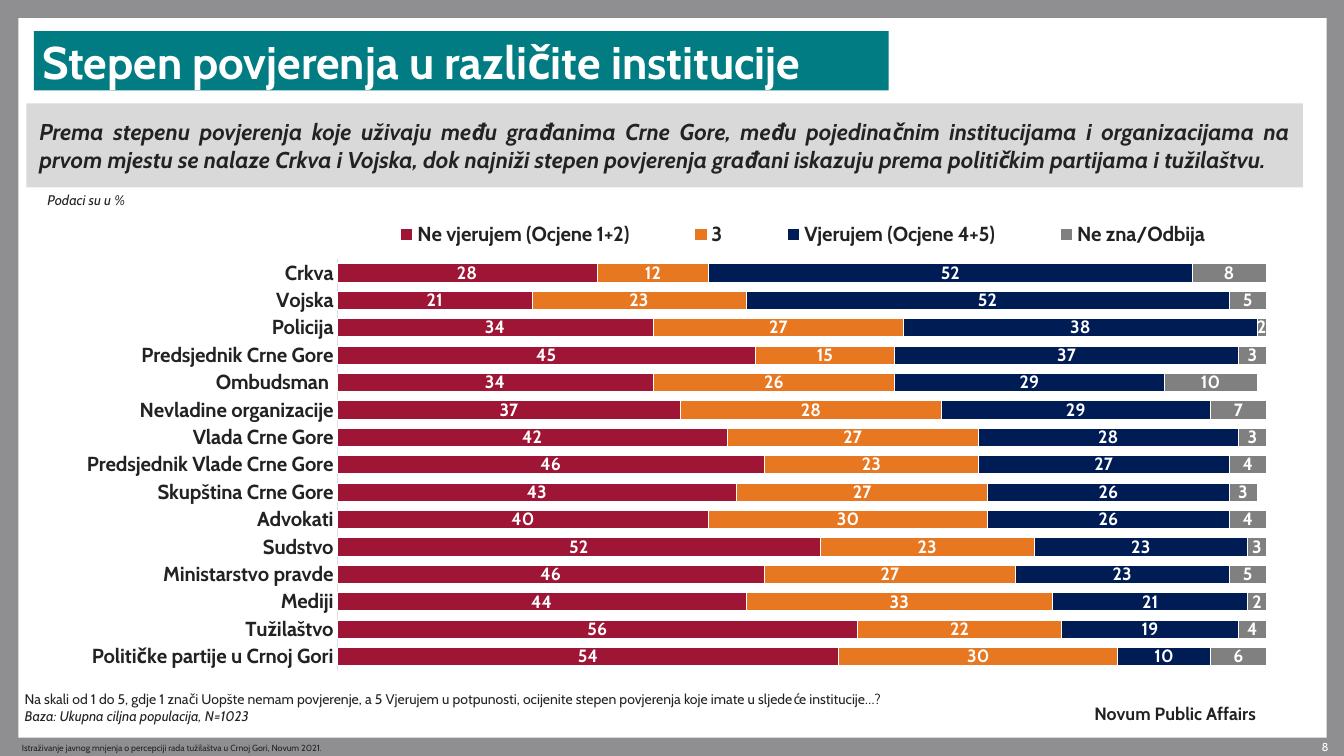
from dataclasses import dataclass
from typing import Any, Optional

import lxml.etree
import pptx
import pptx.chart.data
import pptx.dml.color
import pptx.enum.chart
import pptx.enum.shapes
import pptx.enum.text
import pptx.oxml
import pptx.util

RGB = pptx.dml.color.RGBColor
Inches = pptx.util.Inches
Align = pptx.enum.text.PP_ALIGN
Anchor = pptx.enum.text.MSO_ANCHOR

FACE = "Cabin"
WHITE = RGB(0xFF, 0xFF, 0xFF)
INK = RGB(0x22, 0x22, 0x23)
FRAME = RGB(0x8F, 0x8F, 0x92)
TEAL = RGB(0x00, 0x7C, 0x82)
PALE = RGB(0xD9, 0xD9, 0xD9)
RULE = RGB(0xDD, 0xDD, 0xDE)
RED = RGB(0x9F, 0x15, 0x35)
ORANGE = RGB(0xE8, 0x77, 0x22)
NAVY = RGB(0x00, 0x1C, 0x54)
GRAY = RGB(0x80, 0x80, 0x80)


@dataclass
class Line:
    text: str
    bold: bool = False
    italic: bool = False


@dataclass
class Box:
    area: tuple[float, float, float, float]
    lines: tuple[Line, ...] = ()
    size: int = 11
    color: RGB = INK
    fill: Optional[RGB] = None
    align: Align = Align.LEFT
    anchor: Anchor = Anchor.MIDDLE
    inset: tuple[float, float] = (0, 0)


@dataclass
class Series:
    name: str
    color: RGB
    values: tuple[int, ...]


BOXES = (
    Box((0.2, 0.2, 14.31, 7.87), fill=WHITE),
    Box((14.06, 8.09, 0.47, 0.17), (Line("8"),), 9, WHITE, align=Align.RIGHT),
    Box((11.97, 7.69, 2.09, 0.24), (Line("Novum Public Affairs", bold=True),), 14,
        anchor=Anchor.TOP),
    Box((0.24, 8.09, 4.86, 0.18), (Line(
        "Istraživanje javnog mnjenja o percepciji rada tužilaštva "
        "u Crnoj Gori, Novum 2021."),), 7),
    Box((0.37, 0.34, 9.35, 0.65),
        (Line("Stepen povjerenja u različite institucije", bold=True),),
        36, WHITE, TEAL, inset=(0.09, 0.02)),
    Box((0.29, 1.13, 13.96, 0.92), (Line(
        "Prema stepenu povjerenja koje uživaju među građanima Crne Gore, među "
        "pojedinačnim institucijama i organizacijama na prvom mjestu se nalaze "
        "Crkva i Vojska, dok najniži stepen povjerenja građani iskazuju prema "
        "političkim partijama i tužilaštvu.", bold=True, italic=True),),
        18, fill=PALE, align=Align.JUSTIFY, inset=(0.14, 0)),
    Box((0.42, 2.05, 1.34, 0.29), (Line("Podaci su u %", italic=True),),
        anchor=Anchor.TOP, inset=(0.1, 0.05)),
    Box((0.27, 7.55, 10.33, 0.38), (
        Line("Na skali od 1 do 5, gdje 1 znači Uopšte nemam povjerenje, a 5 Vjerujem "
             "u potpunosti, ocijenite stepen povjerenja koje imate u sljedeće "
             "institucije…?"),
        Line("Baza: Ukupna ciljna populacija, N=1023", italic=True))),
)

BODIES = (
    "Crkva", "Vojska", "Policija", "Predsjednik Crne Gore", "Ombudsman ",
    "Nevladine organizacije", "Vlada Crne Gore", "Predsjednik Vlade Crne Gore",
    "Skupština Crne Gore", "Advokati", "Sudstvo", "Ministarstvo pravde",
    "Mediji", "Tužilaštvo", "Političke partije u Crnoj Gori",
)
TRUST = (
    Series("Ne vjerujem (Ocjene 1+2)", RED,
           (28, 21, 34, 45, 34, 37, 42, 46, 43, 40, 52, 46, 44, 56, 54)),
    Series("3", ORANGE,
           (12, 23, 27, 15, 26, 28, 27, 23, 27, 30, 23, 27, 33, 22, 30)),
    Series("Vjerujem (Ocjene 4+5)", NAVY,
           (52, 52, 38, 37, 29, 29, 28, 27, 26, 26, 23, 23, 21, 19, 10)),
    Series("Ne zna/Odbija", GRAY,
           (8, 5, 2, 3, 10, 7, 3, 4, 3, 4, 3, 5, 2, 4, 6)),
)


def style(font: Any, size: int, color: RGB, bold: bool = False,
          italic: bool = False) -> None:
    font.name = FACE
    font.size = pptx.util.Pt(size)
    font.color.rgb = color
    font.bold = bold
    font.italic = italic


def draw(slide: Any, box: Box) -> None:
    area = [Inches(n) for n in box.area]
    if box.fill is None:
        shape = slide.shapes.add_textbox(*area)
    else:
        shape = slide.shapes.add_shape(
            pptx.enum.shapes.MSO_SHAPE.RECTANGLE, *area)
        shape.shadow.inherit = False
        shape.fill.solid()
        shape.fill.fore_color.rgb = box.fill
        shape.line.fill.background()
    if not box.lines:
        return
    frame = shape.text_frame
    frame.word_wrap = True
    frame.vertical_anchor = box.anchor
    frame.margin_left = frame.margin_right = Inches(box.inset[0])
    frame.margin_top = frame.margin_bottom = Inches(box.inset[1])
    frame.text = "\n".join(line.text for line in box.lines)
    for para, line in zip(frame.paragraphs, box.lines):
        para.alignment = box.align
        for run in para.runs:
            style(run.font, box.size, box.color, line.bold, line.italic)


def place(part: Any, area: tuple[float, float, float, float],
          inner: bool = False) -> None:
    """Fix a chart part at fractions of the chart area."""
    tags = [("layoutTarget", "inner")] if inner else []
    tags += [("xMode", "edge"), ("yMode", "edge")]
    tags += list(zip("xywh", area))
    space = pptx.oxml.ns.nsdecls("c")
    body = "".join(f'<c:{tag} val="{val}"/>' for tag, val in tags)
    layout = pptx.oxml.parse_xml(
        f"<c:layout {space}><c:manualLayout>{body}</c:manualLayout></c:layout>")
    name = pptx.oxml.ns.qn("c:layout")
    for old in part.findall(name):
        part.remove(old)
    # The layout comes first in a plot area, and after the position in a legend.
    part.insert(0 if inner else 1, layout)


def plot(slide: Any) -> None:
    data = pptx.chart.data.CategoryChartData(number_format="#,##0")
    data.categories = BODIES
    for item in TRUST:
        data.add_series(item.name, item.values)
    kinds = pptx.enum.chart
    chart = slide.shapes.add_chart(
        kinds.XL_CHART_TYPE.BAR_STACKED, Inches(0.29), Inches(2.23),
        Inches(13.81), Inches(5.14), data).chart
    style(chart.font, 16, INK, bold=True)
    chart.has_title = False

    chart.has_legend = True
    legend = chart.legend
    legend.position = kinds.XL_LEGEND_POSITION.RIGHT
    legend.include_in_layout = False
    style(legend.font, 16, INK, bold=True)
    place(legend._element, (0.25, 0.02, 0.73, 0.09))
    place(chart._chartSpace.chart.plotArea, (0.246, 0.118, 0.736, 0.875), inner=True)

    axis = chart.category_axis
    axis.reverse_order = True
    axis.major_tick_mark = kinds.XL_TICK_MARK.NONE
    axis.format.line.color.rgb = RULE
    axis.format.line.width = pptx.util.Pt(0.75)
    style(axis.tick_labels.font, 16, INK, bold=True)
    scale = chart.value_axis
    scale.minimum_scale = 0
    scale.maximum_scale = 100
    scale.has_major_gridlines = False
    scale.visible = False

    bars = chart.plots[0]
    bars.gap_width = 50
    bars.overlap = 100
    bars.vary_by_categories = False
    for series, item in zip(bars.series, TRUST):
        series.format.fill.solid()
        series.format.fill.fore_color.rgb = item.color
        series.format.line.color.rgb = WHITE
        series.format.line.width = pptx.util.Pt(0.75)
        labels = series.data_labels
        labels.show_value = True
        labels.number_format = "#,##0"
        labels.number_format_is_linked = False
        style(labels.font, 14, WHITE, bold=True)


def main() -> None:
    deck = pptx.Presentation()
    deck.slide_width = Inches(14.7)
    deck.slide_height = Inches(8.27)
    slide = deck.slides.add_slide(deck.slide_layouts[6])
    slide.background.fill.solid()
    slide.background.fill.fore_color.rgb = FRAME
    for box in BOXES:
        draw(slide, box)
    plot(slide)
    deck.save("out.pptx")


if __name__ == "__main__":
    main()
